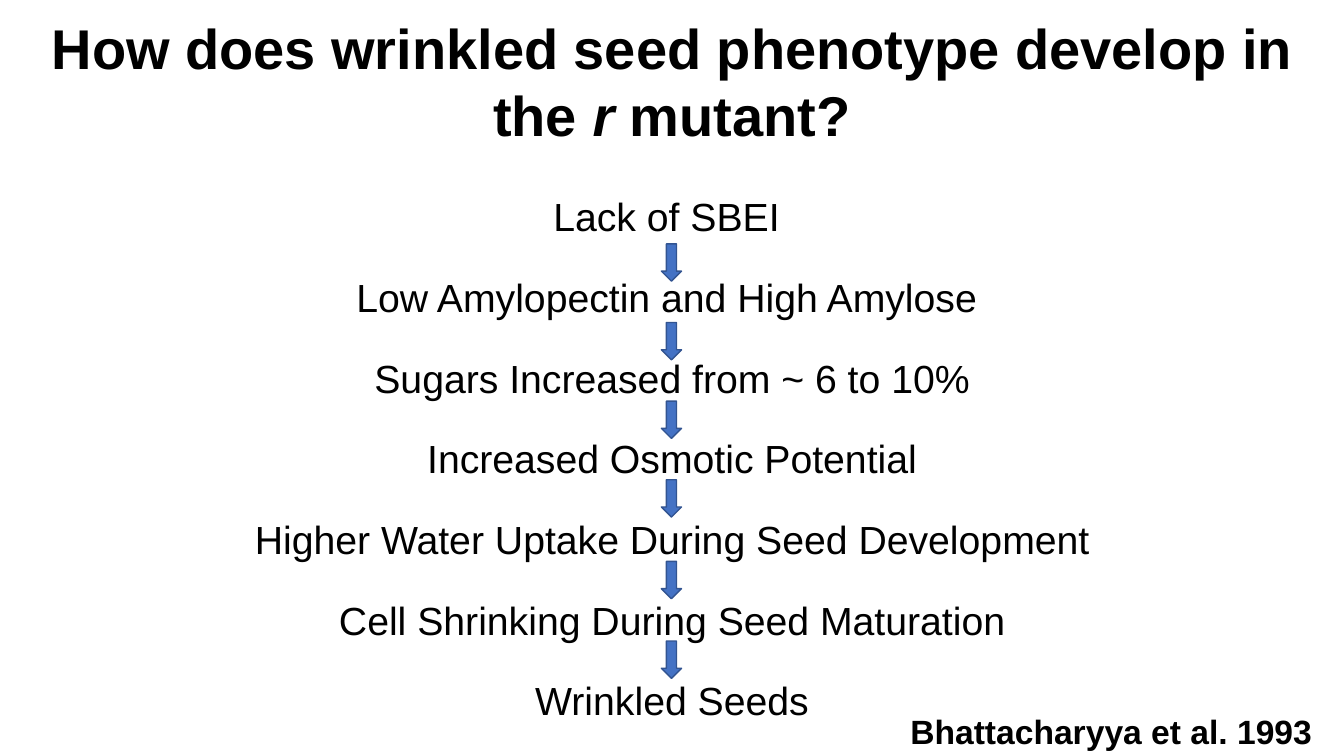
from pptx import Presentation
from pptx.dml.color import RGBColor
from pptx.enum.shapes import MSO_SHAPE
from pptx.enum.text import MSO_AUTO_SIZE, PP_ALIGN
from pptx.util import Pt

DOWN = MSO_SHAPE.DOWN_ARROW
GROW = MSO_AUTO_SIZE.SHAPE_TO_FIT_TEXT
CENTER = PP_ALIGN.CENTER
RIGHT = PP_ALIGN.RIGHT

PX = 9144
FONT = "Arial"
COLORS = {"ink": "000000", "blue": "4472C4", "edge": "325491"}
STEPS = [
    "Lack of SBEI ",
    "Low Amylopectin and High Amylose ",
    "Sugars Increased from ~ 6 to 10%",
    "Increased Osmotic Potential",
    "Higher Water Uptake During Seed Development",
    "Cell Shrinking During Seed Maturation",
    "Wrinkled Seeds",
]
TOPS = [242, 320, 398, 476, 557, 636]


class Deck:
    """Holds the style and the current slide."""

    def __init__(self, width, height):
        self.show = Presentation()
        self.show.slide_width = width * PX
        self.show.slide_height = height * PX
        self.slide = self.show.slides.add_slide(self.show.slide_layouts[6])

    def color(self, name):
        return RGBColor.from_string(COLORS[name])

    def group(self):
        return self.slide.shapes.add_group_shape().shapes

    def text(self, home, box, paras, size, align=CENTER, bold=False, after=0):
        shape = home.add_textbox(*(n * PX for n in box))
        frame = shape.text_frame
        frame.word_wrap = True
        frame.auto_size = GROW
        for i, runs in enumerate(paras):
            para = frame.add_paragraph() if i else frame.paragraphs[0]
            para.alignment = align
            para.space_after = Pt(after)
            for words, slant in runs:
                run = para.add_run()
                run.text = words
                font = run.font
                font.name = FONT
                font.size = Pt(size)
                font.bold = bold
                font.italic = slant
                font.color.rgb = self.color("ink")

    def arrow(self, home, box):
        shape = home.add_shape(DOWN, *(n * PX for n in box))
        shape.shadow.inherit = False
        shape.fill.solid()
        shape.fill.fore_color.rgb = self.color("blue")
        shape.line.color.rgb = self.color("edge")
        shape.line.width = Pt(1)

    def save(self):
        self.show.save("out.pptx")


def main():
    deck = Deck(1333, 750)
    page = deck.slide.shapes
    deck.text(page, (869, 700, 442, 50),
              [[("Bhattacharyya et al. 1993", False)]], 24, RIGHT, True)
    title = [("How does wrinkled seed phenotype develop in the ", False),
             ("r", True), (" mutant?", False)]
    deck.text(page, (0, 8, 1333, 145), [title], 40, bold=True)
    flow = deck.group()
    deck.text(flow, (200, 186, 933, 542),
              [[(step, False)] for step in STEPS], 28, after=24)
    for top in TOPS:
        deck.arrow(flow, (656, top, 20, 37))
    deck.save()


if __name__ == "__main__":
    main()
